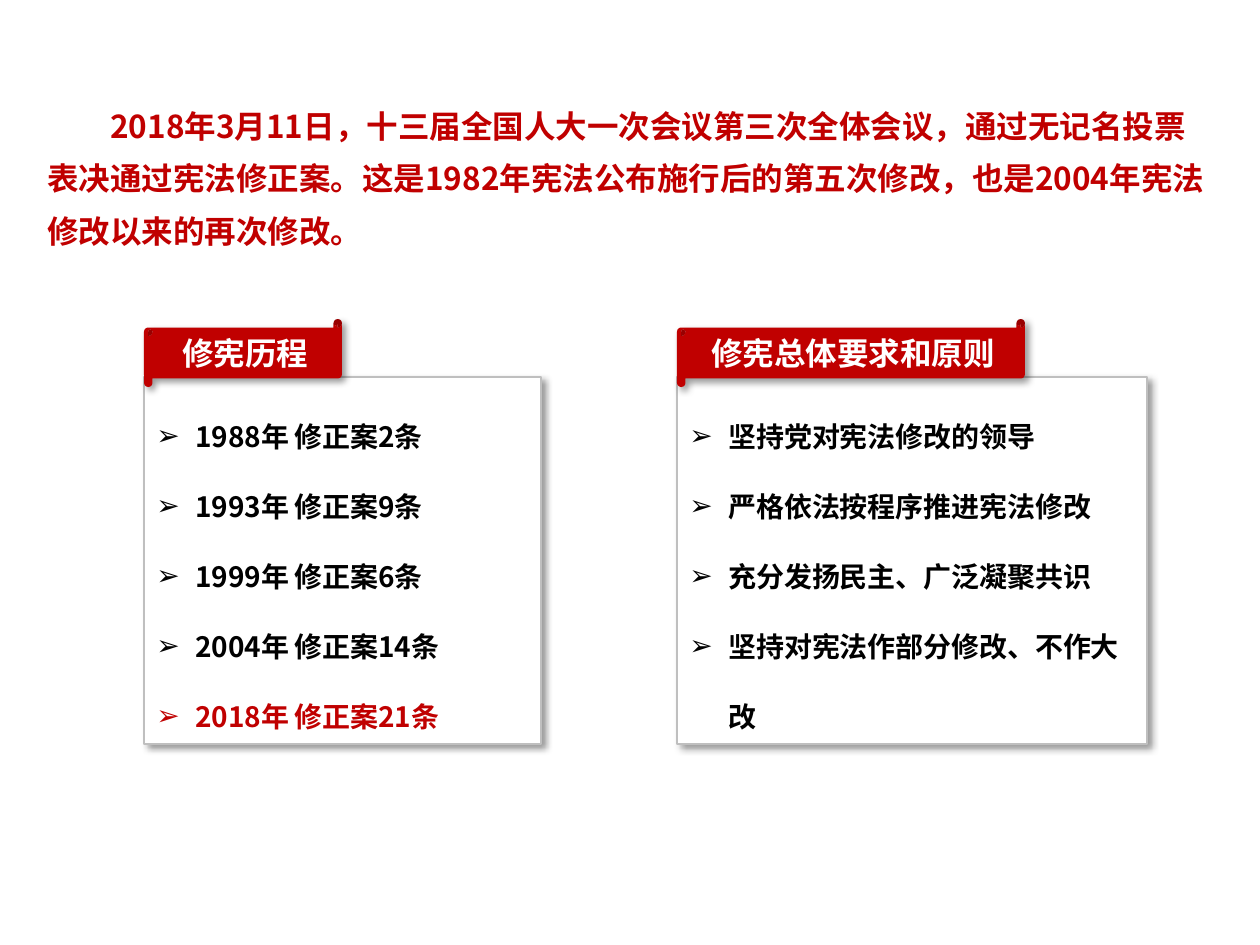
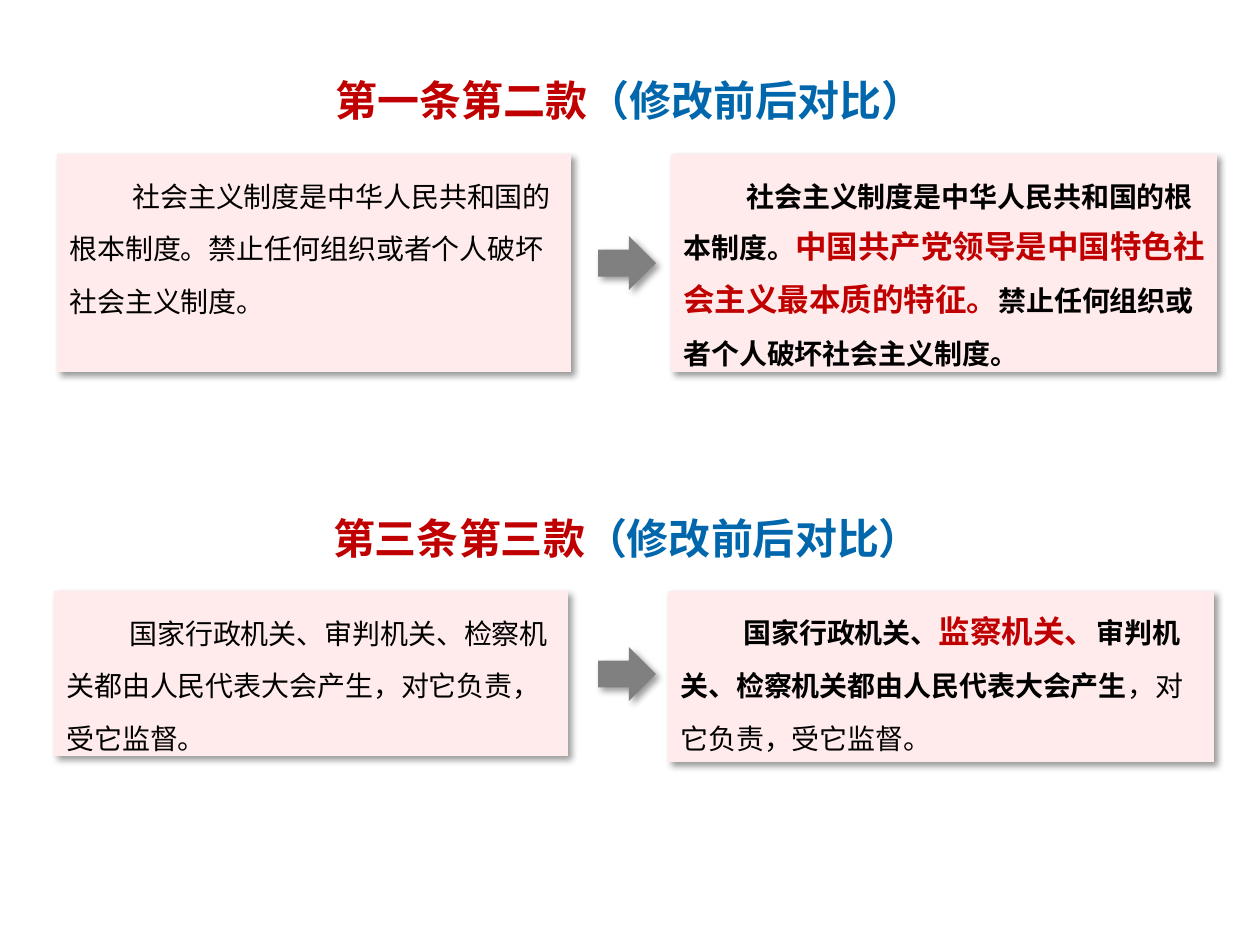
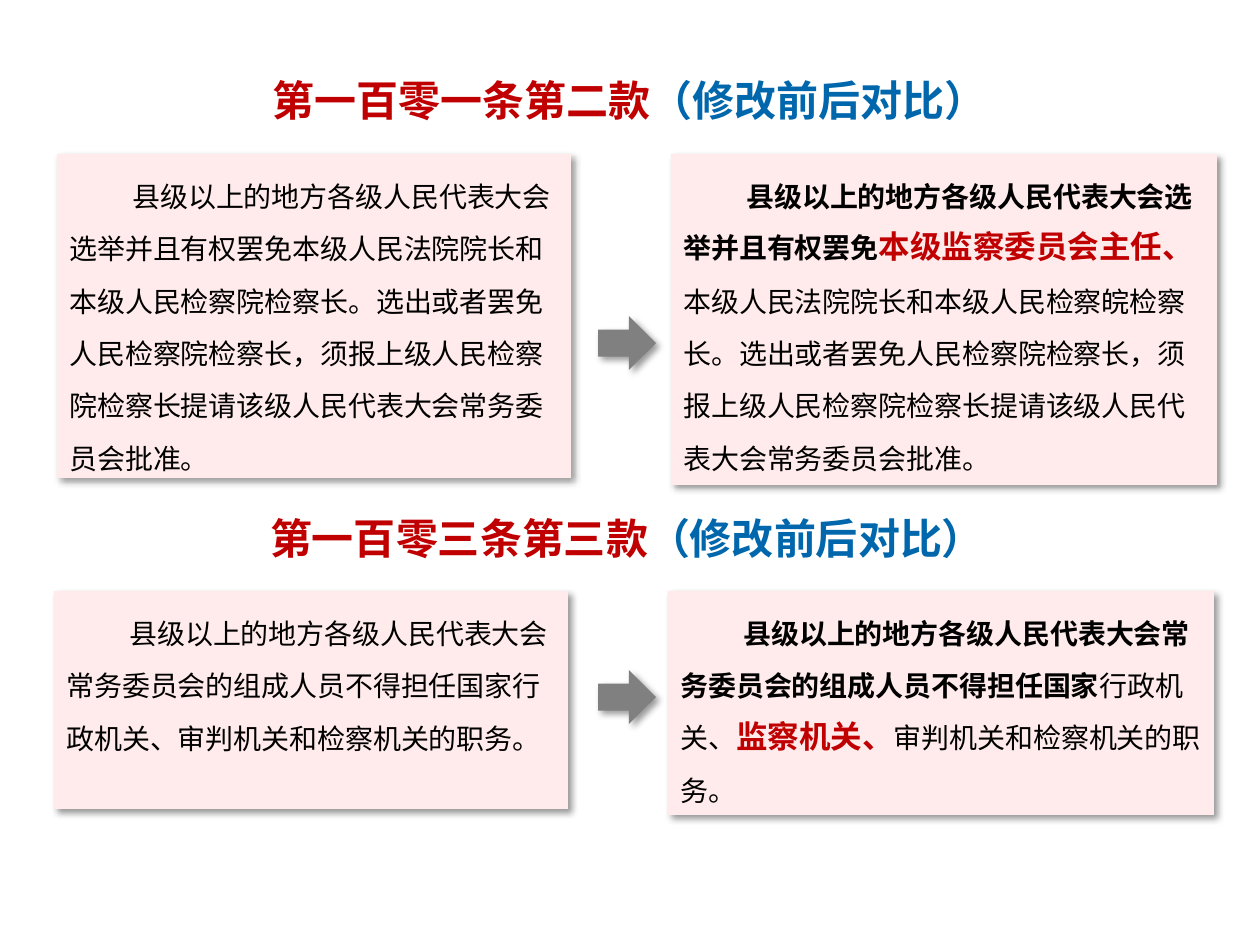
"""Build three slides on the 2018 constitutional amendment, with before and after texts."""
import lxml.etree
import pptx
import pptx.dml.color
import pptx.enum.shapes
import pptx.enum.text
import pptx.oxml
import pptx.oxml.ns
import pptx.util


class Theme:
    red, blue, black, white = "C00000", "0067AC", "000000", "FFFFFF"
    pink, grey, border = "FFEBEB", "808080", "BFBFBF"
    font, title_font = "Noto Sans CJK SC", "Arial"
    styles = {
        "lead": (18, red, True),
        "banner": (18, white, True),
        "title": (24, red, True),
        "subtitle": (24, blue, True),
        "plain": (16, black, False),
        "bold": (16, black, True),
        "latest": (16, red, True),
        "new": (18, red, True),
    }


PX = 914400 / 126
INDENT = 63
HANGING = 39
SHAPE = pptx.enum.shapes.MSO_SHAPE
ANCHOR = pptx.enum.text.MSO_ANCHOR
CENTER = pptx.enum.text.PP_ALIGN.CENTER
NS = pptx.oxml.ns.nsdecls("a")
SHADOW = (f'<a:outerShdw {NS} blurRad="50800" dist="38100" dir="2700000" algn="tl" rotWithShape="0">'
          '<a:srgbClr val="000000"><a:alpha val="40000"/></a:srgbClr></a:outerShdw>')
BULLET = (f'<a:buFont {NS} typeface="Arial"/>', f'<a:buChar {NS} char="➢"/>')
TABS = f'<a:tabLst {NS}>' + "".join(
    f'<a:tab pos="{round(x * PX)}" algn="l"/>' for x in (138, 178)) + '</a:tabLst>'


def add_shape(s, kind, box, fill, line=None, anchor=ANCHOR.TOP):
    sp = s.shapes.add_shape(kind, *(round(v * PX) for v in box))
    sp.fill.solid()
    sp.fill.fore_color.rgb = pptx.dml.color.RGBColor.from_string(fill)
    if line:
        sp.line.color.rgb = pptx.dml.color.RGBColor.from_string(line)
        sp.line.width = pptx.util.Pt(0.75)
    else:
        sp.line.fill.background()
    sp.shadow.inherit = False
    effects = sp._element.spPr.find(pptx.oxml.ns.qn("a:effectLst"))
    effects.append(pptx.oxml.parse_xml(SHADOW))
    sp.text_frame.word_wrap = True
    sp.text_frame.vertical_anchor = anchor
    return sp


def write(p, runs, align=pptx.enum.text.PP_ALIGN.LEFT, spacing=None, margin=0, indent=0, font=Theme.font):
    p.alignment = align
    if spacing:
        p.line_spacing = pptx.util.Pt(spacing)
    pPr = p._p.get_or_add_pPr()
    pPr.set("marL", str(round(margin * PX)))
    pPr.set("indent", str(round(indent * PX)))
    for text, style in runs:
        r = p.add_run()
        r.text = text
        size, color, bold = Theme.styles[style]
        r.font.name = font
        r.font.size = pptx.util.Pt(size)
        r.font.bold = bold
        r.font.color.rgb = pptx.dml.color.RGBColor.from_string(color)
        latin = r._r.rPr.find(pptx.oxml.ns.qn("a:latin"))
        latin.addnext(pptx.oxml.parse_xml(f'<a:ea {NS} typeface="{Theme.font}"/>'))


prs = pptx.Presentation()
prs.slide_width, prs.slide_height = round(1260 * PX), round(945 * PX)
blank = prs.slide_layouts[6]

s = prs.slides.add_slide(blank)
sp = s.shapes.add_textbox(*(round(v * PX) for v in (35, 86, 1191, 171)))
tf = sp.text_frame
tf.word_wrap = True
lead = "2018年3月11日，十三届全国人大一次会议第三次全体会议，通过无记名投票表决通过宪法修正案。这是1982年宪法公布施行后的第五次修改，也是2004年宪法修改以来的再次修改。"
write(tf.paragraphs[0], [(lead, "lead")], spacing=30, indent=INDENT)

panels = [
    (677, 470, 348, "修宪总体要求和原则", [
        ("坚持党对宪法修改的领导", "bold"),
        ("严格依法按程序推进宪法修改", "bold"),
        ("充分发扬民主、广泛凝聚共识", "bold"),
        ("坚持对宪法作部分修改、不作大改", "bold"),
    ]),
    (144, 397, 198, "修宪历程", [
        ("1988年\t修正案2条", "bold"),
        ("1993年\t修正案9条", "bold"),
        ("1999年\t修正案6条", "bold"),
        ("2004年\t修正案14条", "bold"),
        ("2018年\t修正案21条", "latest"),
    ]),
]
for left, width, banner_width, heading, items in panels:
    sp = add_shape(s, SHAPE.RECTANGLE, (left, 377, width, 367), Theme.white, Theme.border)
    tf = sp.text_frame
    for i, item in enumerate(items):
        p = tf.add_paragraph() if i else tf.paragraphs[0]
        pPr = p._p.get_or_add_pPr()
        for xml in BULLET:
            pPr.append(pptx.oxml.parse_xml(xml))
        if "\t" in item[0]:
            pPr.append(pptx.oxml.parse_xml(TABS))
        write(p, [item], spacing=40, margin=HANGING, indent=-HANGING)
    sp = add_shape(s, SHAPE.HORIZONTAL_SCROLL, (left, 319, banner_width, 68), Theme.red, anchor=ANCHOR.MIDDLE)
    write(sp.text_frame.paragraphs[0], [(heading, "banner")], align=CENTER)

comparisons = [
    [
        ("第一条第二款", 234, 218, 218,
         [("社会主义制度是中华人民共和国的根本制度。禁止任何组织或者个人破坏社会主义制度。", "plain")],
         [("社会主义制度是中华人民共和国的根本制度。", "bold"),
          ("中国共产党领导是中国特色社会主义最本质的特征。", "new"),
          ("禁止任何组织或者个人破坏社会主义制度。", "bold")]),
        ("第三条第三款", 645, 165, 171,
         [("国家行政机关、审判机关、检察机关都由人民代表大会产生，对它负责，受它监督。", "plain")],
         [("国家行政机关、", "bold"),
          ("监察机关、", "new"),
          ("审判机关、检察机关都由人民代表大会产生", "bold"),
          ("，对它负责，受它监督。", "plain")]),
    ],
    [
        ("第一百零一条第二款", 314, 324, 331,
         [("县级以上的地方各级人民代表大会选举并且有权罢免本级人民法院院长和本级人民检察院检察长。选出或者罢免人民检察院检察长，须报上级人民检察院检察长提请该级人民代表大会常务委员会批准。", "plain")],
         [("县级以上的地方各级人民代表大会选举并且有权罢免", "bold"),
          ("本级监察委员会主任、", "new"),
          ("本级人民法院院长和本级人民检察皖检察长。选出或者罢免人民检察院检察长，须报上级人民检察院检察长提请该级人民代表大会常务委员会批准。", "plain")]),
        ("第一百零三条第三款", 668, 218, 224,
         [("县级以上的地方各级人民代表大会常务委员会的组成人员不得担任国家行政机关、审判机关和检察机关的职务。", "plain")],
         [("县级以上的地方各级人民代表大会常务委员会的组成人员不得担任国家", "bold"),
          ("行政机关、", "plain"),
          ("监察机关、", "new"),
          ("审判机关和检察机关的职务。", "plain")]),
    ],
]
for rows in comparisons:
    s = prs.slides.add_slide(blank)
    for i, (clause, arrow_top, before_height, after_height, before, after) in enumerate(rows):
        dx, dy = -3 * i, 437 * i
        sp = s.shapes.add_textbox(*(round(v * PX) for v in (dx, 66 + dy, 1260, 68)))
        tf = sp.text_frame
        tf.word_wrap = True
        tf.margin_left = tf.margin_right = round(16 * PX)
        tf.margin_top = tf.margin_bottom = round(9 * PX)
        write(tf.paragraphs[0], [(clause, "title"), ("（修改前后对比）", "subtitle")],
              align=CENTER, font=Theme.title_font)
        sp = add_shape(s, SHAPE.DOWN_ARROW, (600, arrow_top, 54, 58), Theme.grey)
        sp.rotation = 270
        for left, width, height, runs in ((57, 514, before_height, before), (671, 546, after_height, after)):
            sp = add_shape(s, SHAPE.RECTANGLE, (left + dx, 154 + dy, width, height), Theme.pink)
            write(sp.text_frame.paragraphs[0], runs, spacing=30, indent=INDENT)

prs.save("out.pptx")
